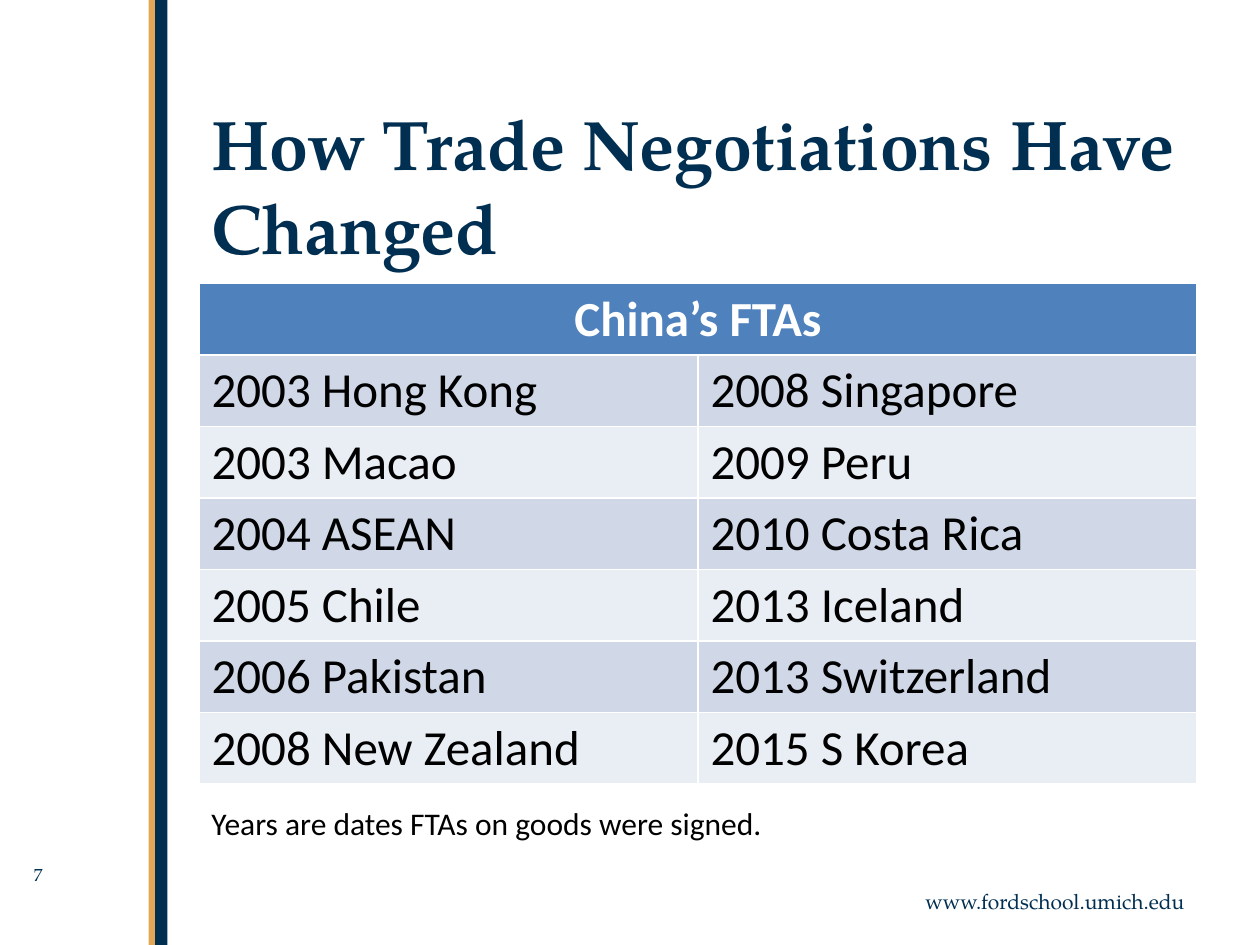
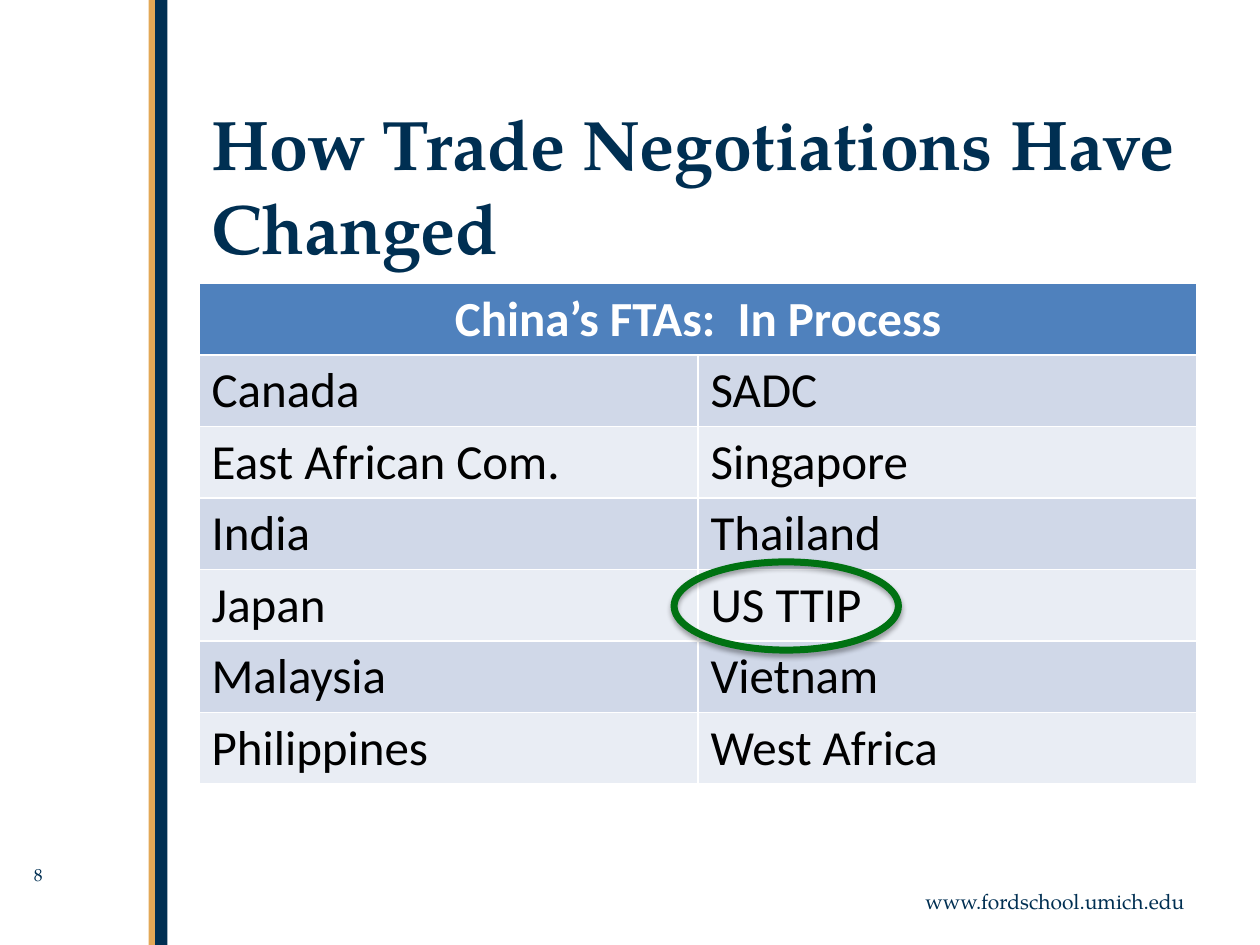
from lxml import etree
from pptx import Presentation
from pptx.dml.color import RGBColor
from pptx.enum.shapes import MSO_SHAPE as Shape
from pptx.enum.text import MSO_ANCHOR as Anchor, PP_ALIGN as Align
from pptx.oxml import parse_xml
from pptx.oxml.ns import nsdecls
from pptx.util import Inches, Pt

NAVY, GOLD, GREEN = "002F52", "E3A856", "007212"
HEADER_FILL, ROW_FILLS = "4F81BD", ("D0D8E8", "E9EDF4")
SERIF, SANS = "TeX Gyre Pagella", "Calibri"
LEFT, WIDTH = 1.58, 7.92


def color(value):
    return RGBColor.from_string(value)


def write(frame, text, size, font=SANS, fill="000000", bold=False, align=Align.LEFT):
    frame.word_wrap = True
    frame.vertical_anchor = Anchor.TOP
    para = frame.paragraphs[0]
    para.alignment = align
    span = para.add_run()
    span.text = text
    span.font.name, span.font.size, span.font.bold = font, Pt(size), bold
    span.font.color.rgb = color(fill)


slides = [
    ("China’s FTAs", [
        ("2003 Hong Kong", "2008 Singapore"),
        ("2003 Macao", "2009 Peru"),
        ("2004 ASEAN", "2010 Costa Rica"),
        ("2005 Chile", "2013 Iceland"),
        ("2006 Pakistan", "2013 Switzerland"),
        ("2008 New Zealand", "2015 S Korea"),
    ]),
    ("China’s FTAs:  In Process", [
        ("Canada", "SADC"),
        ("East African Com.", "Singapore"),
        ("India", "Thailand"),
        ("Japan", "US TTIP"),
        ("Malaysia", "Vietnam"),
        ("Philippines", "West Africa"),
    ]),
]

deck = Presentation()
deck.slide_width, deck.slide_height = Inches(10), Inches(7.5)
pages = []

for number, (heading, rows) in enumerate(slides, start=7):
    page = deck.slides.add_slide(deck.slide_layouts[6])
    pages.append(page)

    # Vertical bands
    for left, width, fill in ((1.23, 0.1, NAVY), (1.18, 0.05, GOLD)):
        band = page.shapes.add_shape(
            Shape.RECTANGLE, Inches(left), 0, Inches(width), deck.slide_height)
        band.shadow.inherit = False
        band.fill.solid()
        band.fill.fore_color.rgb = color(fill)
        band.line.fill.background()

    # Web address, page number and title
    address = page.shapes.add_textbox(Inches(7), Inches(7), Inches(2.5), Inches(0.3))
    write(address.text_frame, "www.fordschool.umich.edu", 12,
          font=SERIF, fill=NAVY, align=Align.RIGHT)
    page_number = page.shapes.add_textbox(
        Inches(0.17), Inches(6.81), Inches(0.92), Inches(0.34))
    write(page_number.text_frame, str(number), 10, font=SERIF, fill=NAVY)
    title = page.shapes.add_textbox(
        Inches(LEFT), Inches(0.75), Inches(WIDTH), Inches(1.23))
    write(title.text_frame, "How Trade Negotiations Have Changed", 40,
          font=SERIF, fill=NAVY, bold=True)

    # Table of agreements; its default style draws the white rules
    table = page.shapes.add_table(
        len(rows) + 1, 2, Inches(LEFT), Inches(2.25), Inches(WIDTH), Inches(3.97)).table
    header = table.cell(0, 0)
    header.merge(table.cell(0, 1))
    header.fill.solid()
    header.fill.fore_color.rgb = color(HEADER_FILL)
    write(header.text_frame, heading, 28, fill="FFFFFF", bold=True, align=Align.CENTER)
    for row, names in enumerate(rows, start=1):
        for column, name in enumerate(names):
            cell = table.cell(row, column)
            cell.fill.solid()
            cell.fill.fore_color.rgb = color(ROW_FILLS[(row - 1) % 2])
            write(cell.text_frame, name, 28)

signed_page, process_page = pages

# Note under the signed agreements
note = signed_page.shapes.add_textbox(
    Inches(LEFT), Inches(6.33), Inches(6.75), Inches(0.4))
write(note.text_frame, "Years are dates FTAs on goods were signed.", 18)

# Ring around US TTIP, with a soft shadow below it
ring = process_page.shapes.add_shape(
    Shape.OVAL, Inches(5.35), Inches(4.46), Inches(1.78), Inches(0.7))
ring.shadow.inherit = False
ring.fill.background()
ring.line.color.rgb = color(GREEN)
ring.line.width = Pt(4)
effects = ring.element.spPr.find("{*}effectLst")
effects.append(parse_xml(
    f'<a:outerShdw {nsdecls("a")} blurRad="{Pt(3.1)}" dist="{Pt(1.8)}" dir="5400000" '
    'rotWithShape="0"><a:srgbClr val="000000"><a:alpha val="35000"/></a:srgbClr>'
    '</a:outerShdw>'))

deck.save("out.pptx")
